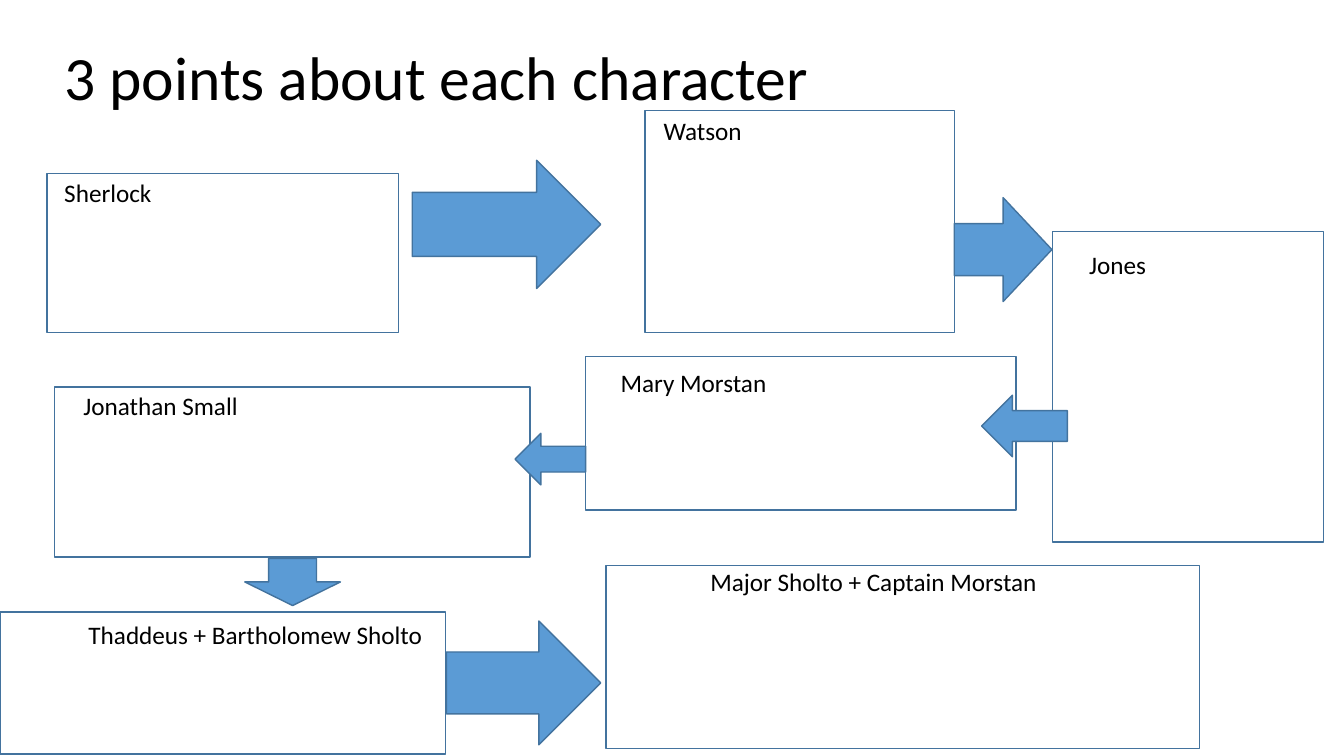
from pptx import Presentation
from pptx.dml.color import RGBColor
from pptx.enum.shapes import MSO_SHAPE as Shape
from pptx.enum.text import MSO_ANCHOR as Anchor
from pptx.util import Cm, Pt

COLORS = {"text": "000000", "arrow": "5B9BD5", "outline": "43739E"}
FONT = "Calibri"

CHARACTERS = [
    ("Sherlock", (1.37, 4.34, 9.27, 3.33), (1.19, 4.37, 8.86, 4.01)),
    (" Watson", (16.33, 2.79, 8.74, 1.02), (16.26, 2.79, 7.8, 5.59)),
    ("Jones", (27.2, 6.15, 5.51, 1.02), (26.52, 5.84, 6.83, 7.82)),
    ("Mary Morstan", (15.39, 9.12, 9.68, 1.02), (14.76, 8.99, 10.85, 3.86)),
    ("Jonathan Small", (1.85, 9.7, 12.34, 1.02), (1.37, 9.75, 11.99, 4.29)),
    ("Thaddeus + Bartholomew Sholto", (1.98, 15.47, 9.22, 1.02), (0, 15.42, 11.23, 3.58)),
    ("Major Sholto + Captain Morstan", (17.65, 14.15, 9.25, 1.02), (15.27, 14.25, 14.96, 4.62)),
]

ARROWS = [
    (Shape.RIGHT_ARROW, (10.39, 4.04, 4.75, 3.23)),
    (Shape.RIGHT_ARROW, (24.05, 4.98, 2.46, 2.62)),
    (Shape.LEFT_ARROW, (24.74, 9.96, 2.16, 1.55)),
    (Shape.LEFT_ARROW, (12.98, 10.92, 1.78, 1.3)),
    (Shape.DOWN_ARROW, (6.17, 14.07, 2.41, 1.19)),
    (Shape.RIGHT_ARROW, (11.25, 15.65, 3.89, 3.12)),
]


def color(name):
    return RGBColor.from_string(COLORS[name])


def add_text(slide, text, bounds, size, anchor=Anchor.TOP, line_spacing=1.0):
    frame = slide.shapes.add_textbox(*map(Cm, bounds)).text_frame
    frame.word_wrap = True
    frame.vertical_anchor = anchor
    paragraph = frame.paragraphs[0]
    paragraph.text = text
    paragraph.line_spacing = line_spacing
    paragraph.font.name = FONT
    paragraph.font.size = Pt(size)
    paragraph.font.color.rgb = color("text")


def add_outlined_shape(slide, kind, bounds, fill=None):
    shape = slide.shapes.add_shape(kind, *map(Cm, bounds))
    shape.shadow.inherit = False
    if fill:
        shape.fill.solid()
        shape.fill.fore_color.rgb = color(fill)
    else:
        shape.fill.background()
    shape.line.color.rgb = color("outline")
    shape.line.width = Pt(1)


def main():
    presentation = Presentation()
    presentation.slide_width = Cm(33.87)
    presentation.slide_height = Cm(19.05)
    slide = presentation.slides.add_slide(presentation.slide_layouts[6])

    add_text(slide, "3 points about each character", (1.37, 0.18, 29.21, 3.68),
             44, Anchor.MIDDLE, 0.9)
    for name, label_bounds, box_bounds in CHARACTERS:
        add_text(slide, name, label_bounds, 18)
        add_outlined_shape(slide, Shape.RECTANGLE, box_bounds)
    for kind, bounds in ARROWS:
        add_outlined_shape(slide, kind, bounds, "arrow")

    presentation.save("out.pptx")


if __name__ == "__main__":
    main()
